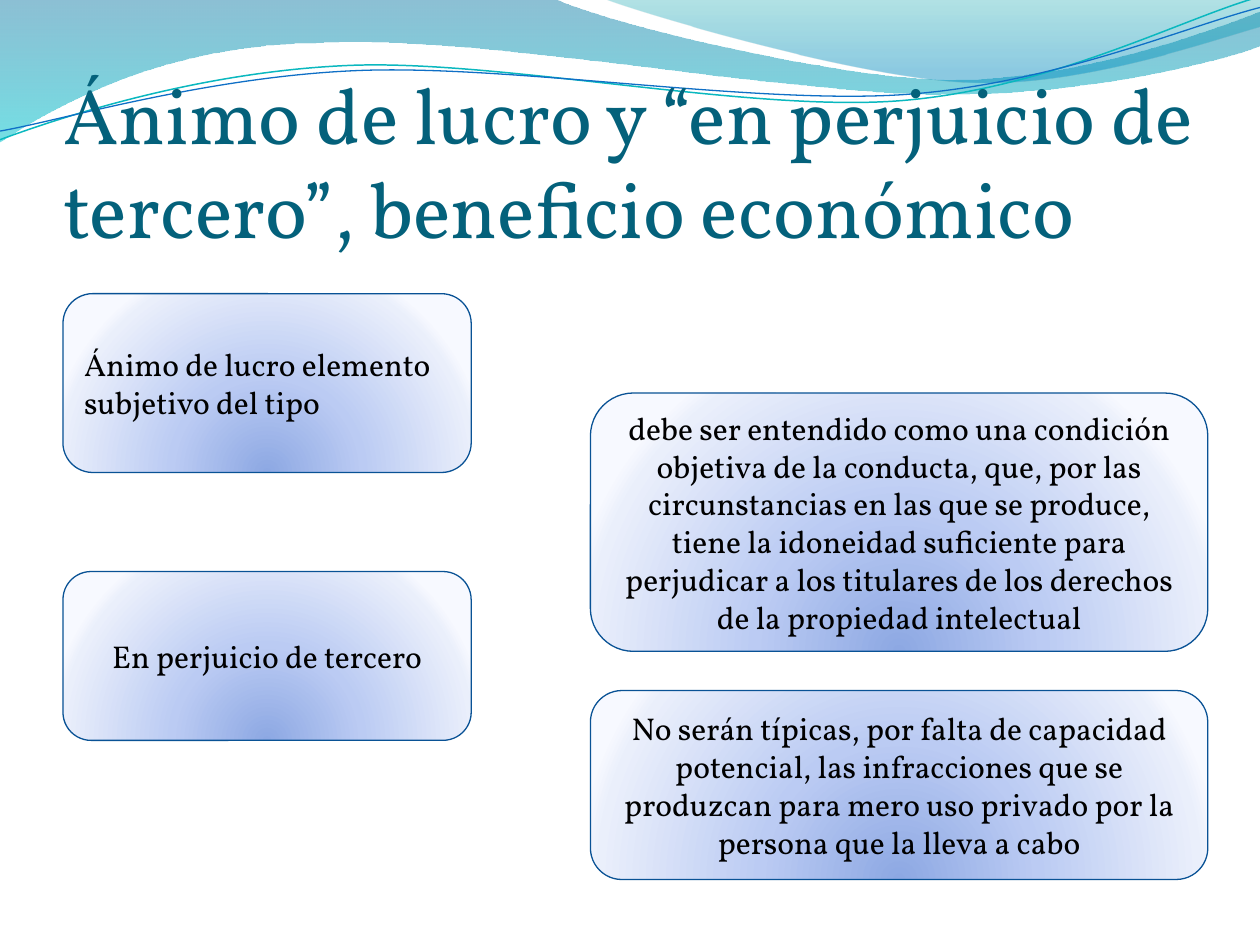
from dataclasses import dataclass

from lxml.etree import SubElement
from pptx import Presentation
from pptx.dml.color import RGBColor
from pptx.enum.lang import MSO_LANGUAGE_ID
from pptx.enum.shapes import MSO_SHAPE
from pptx.enum.text import MSO_ANCHOR, MSO_AUTO_SIZE, PP_ALIGN
from pptx.oxml.ns import qn
from pptx.util import Pt


@dataclass(frozen=True)
class Theme:
    font: str = "Vollkorn"
    title_size: float = 45
    body_size: float = 18
    title: str = "04617B"
    body: str = "000000"
    border: str = "095295"
    teal: str = "0AB8BF"
    blue: str = "0F6FC6"
    # Gradient stops: position %, colour, opacity %
    card: tuple = ((0, "8DA8E3", 100), (43, "BBCBF3", 100),
                   (93, "EAEFFB", 100), (100, "F7F9FF", 100))
    wave_left: tuple = ((0, "0074A1", 45), (100, "00C6CF", 55))
    wave_right: tuple = ((0, "00A1A9", 30), (80, "008BBF", 45))


THEME = Theme()
LINE_ROTATION = 357.3

# Paths in points: pairs are straight segments, sixes are Bézier curves
WAVE_LEFT = [(0, -0.7), (316.8, -0.7),
             (342.7, 12.2, 478.1, 45.4, 545.8, 45.4),
             (614.2, 45.4, 689.8, 18.7, 720, 6.5), (720.7, 25.9),
             (707.8, 31.7, 626.4, 54.7, 537.1, 54),
             (447.8, 54, 275, 20.2, 185, 24.5),
             (92.9, 25.2, 33.1, 59.8, -0.7, 81.4), (0, -0.7)]
WAVE_RIGHT = [(344.9, -0.7), (366.5, 7.9, 491, 44.6, 553.7, 46.8),
              (616.3, 49.7, 691.9, 23, 720, 15.1), (720, 0), (344.9, -0.7)]
LINE_TEAL = [(-1.4, 62.9), (33.8, 51.7, 114.1, 29.4, 199.8, 29.9),
             (284.9, 30.3, 425.8, 67.3, 512.4, 64.9),
             (599, 62.4, 676.4, 25.7, 720.2, 15.5)]
LINE_BLUE = [(-1.1, 57.9), (32.9, 53.7, 118.3, 32.5, 204.1, 33),
             (290.6, 33.4, 428.9, 63.1, 515.5, 61.4),
             (601.3, 59.6, 678.4, 30.1, 721.4, 21.3)]


def set_gradient(sp, stops, radial=False):
    """Fill a shape from top to bottom, or radially from its lower edge."""
    sp.fill.gradient()
    grad = sp.element.spPr.find(qn("a:gradFill"))
    for child in list(grad):
        grad.remove(child)
    gs_list = SubElement(grad, qn("a:gsLst"))
    for pos, color, opacity in stops:
        gs = SubElement(gs_list, qn("a:gs"), pos=str(pos * 1000))
        clr = SubElement(gs, qn("a:srgbClr"), val=color)
        if opacity < 100:
            SubElement(clr, qn("a:alpha"), val=str(opacity * 1000))
    if radial:
        circle = SubElement(grad, qn("a:path"), {"path": "circle"})
        SubElement(circle, qn("a:fillToRect"),
                   l="50000", t="130000", r="50000", b="-30000")
    else:
        SubElement(grad, qn("a:lin"), ang="5400000", scaled="0")


def set_line(sp, color, width):
    sp.line.color.rgb = RGBColor.from_string(color)
    sp.line.width = Pt(width)


def format_text(p, size, color, align):
    p.alignment = align
    for r in p.runs:
        r.font.name = THEME.font
        r.font.size = Pt(size)
        r.font.color.rgb = RGBColor.from_string(color)


def add_outline(shapes, segments, close):
    """Build a freeform, then turn each run of three points into a curve."""
    points = [(Pt(x), Pt(y)) for seg in segments
              for x, y in zip(seg[::2], seg[1::2])]
    builder = shapes.build_freeform(*points[0])
    builder.add_line_segments(points[1:], close=close)
    sp = builder.convert_to_shape()
    sp.shadow.inherit = False
    lines = iter(list(sp.element.iter(qn("a:lnTo"))))
    for seg in segments[1:]:
        line = next(lines)
        if len(seg) == 6:
            curve = line.makeelement(qn("a:cubicBezTo"))
            line.addprevious(curve)
            for part in (line, next(lines), next(lines)):
                curve.append(part[0])
                part.getparent().remove(part)
    return sp


def add_wave(s, segments, stops):
    sp = add_outline(s.shapes, segments, close=True)
    set_gradient(sp, stops)
    sp.line.fill.background()


def add_curve(group, segments, color, width):
    sp = add_outline(group.shapes, segments, close=False)
    sp.rotation = LINE_ROTATION
    sp.fill.background()
    set_line(sp, color, width)


def add_title(s, start, end):
    sp = s.shapes.title
    sp.left, sp.top, sp.width, sp.height = Pt(36), Pt(55.4), Pt(653.8), Pt(90)
    tf = sp.text_frame
    tf.text = start
    p = tf.paragraphs[0]
    p.runs[0].font.language_id = MSO_LANGUAGE_ID.SPANISH
    r = p.add_run()
    r.text = end
    r.font.language_id = MSO_LANGUAGE_ID.ENGLISH_US
    tf.word_wrap = True
    tf.auto_size = MSO_AUTO_SIZE.NONE
    tf.vertical_anchor = MSO_ANCHOR.BOTTOM
    tf.margin_left = tf.margin_right = tf.margin_bottom = 0
    tf.margin_top = Pt(3.6)
    format_text(p, THEME.title_size, THEME.title, PP_ALIGN.LEFT)
    # Bring the title in front of the waves
    sp.element.getparent().append(sp.element)


def add_card(s, left, top, width, height, text, align=PP_ALIGN.CENTER):
    sp = s.shapes.add_shape(MSO_SHAPE.ROUNDED_RECTANGLE,
                            Pt(left), Pt(top), Pt(width), Pt(height))
    sp.shadow.inherit = False
    set_gradient(sp, THEME.card, radial=True)
    set_line(sp, THEME.border, 0.75)
    tf = sp.text_frame
    tf.text = text
    tf.word_wrap = True
    tf.vertical_anchor = MSO_ANCHOR.MIDDLE
    format_text(tf.paragraphs[0], THEME.body_size, THEME.body, align)


def main():
    prs = Presentation()
    prs.slide_width, prs.slide_height = Pt(720), Pt(540)
    s = prs.slides.add_slide(prs.slide_layouts[5])

    # Header waves
    add_wave(s, WAVE_LEFT, THEME.wave_left)
    add_wave(s, WAVE_RIGHT, THEME.wave_right)
    group = s.shapes.add_group_shape()
    add_curve(group, LINE_TEAL, THEME.teal, 0.85)
    add_curve(group, LINE_BLUE, THEME.blue, 0.75)

    add_title(s, "Ánimo de lucro y “en perjuicio de tercero”",
              ", beneficio económico")

    # Left column: concepts
    left, width = 36, 233.3
    add_card(s, left, 167.8, width, 102.2,
             "Ánimo de lucro elemento subjetivo del tipo", PP_ALIGN.LEFT)
    add_card(s, left, 326.6, width, 96.5, "En perjuicio de tercero")

    # Right column: explanations
    left, width = 337.4, 352.8
    add_card(s, left, 224.6, width, 147.6,
             "debe ser entendido como una condición objetiva de la conducta, que, "
             "por las circunstancias en las que se produce, tiene la idoneidad "
             "suficiente para perjudicar a los titulares de los derechos de la "
             "propiedad intelectual")
    add_card(s, left, 394.6, width, 108,
             "No serán típicas, por falta de capacidad potencial, las infracciones "
             "que se produzcan para mero uso privado por la persona que la lleva a cabo")

    prs.save("out.pptx")


if __name__ == "__main__":
    main()
